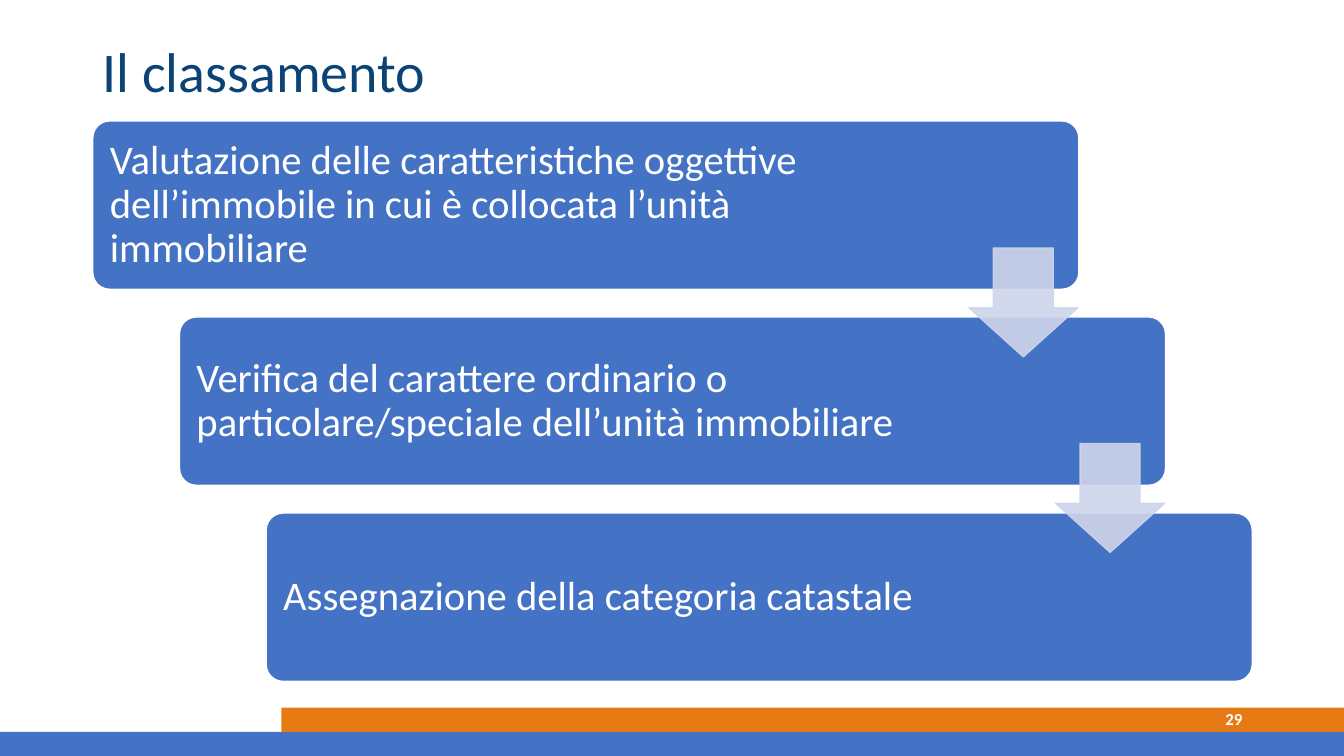
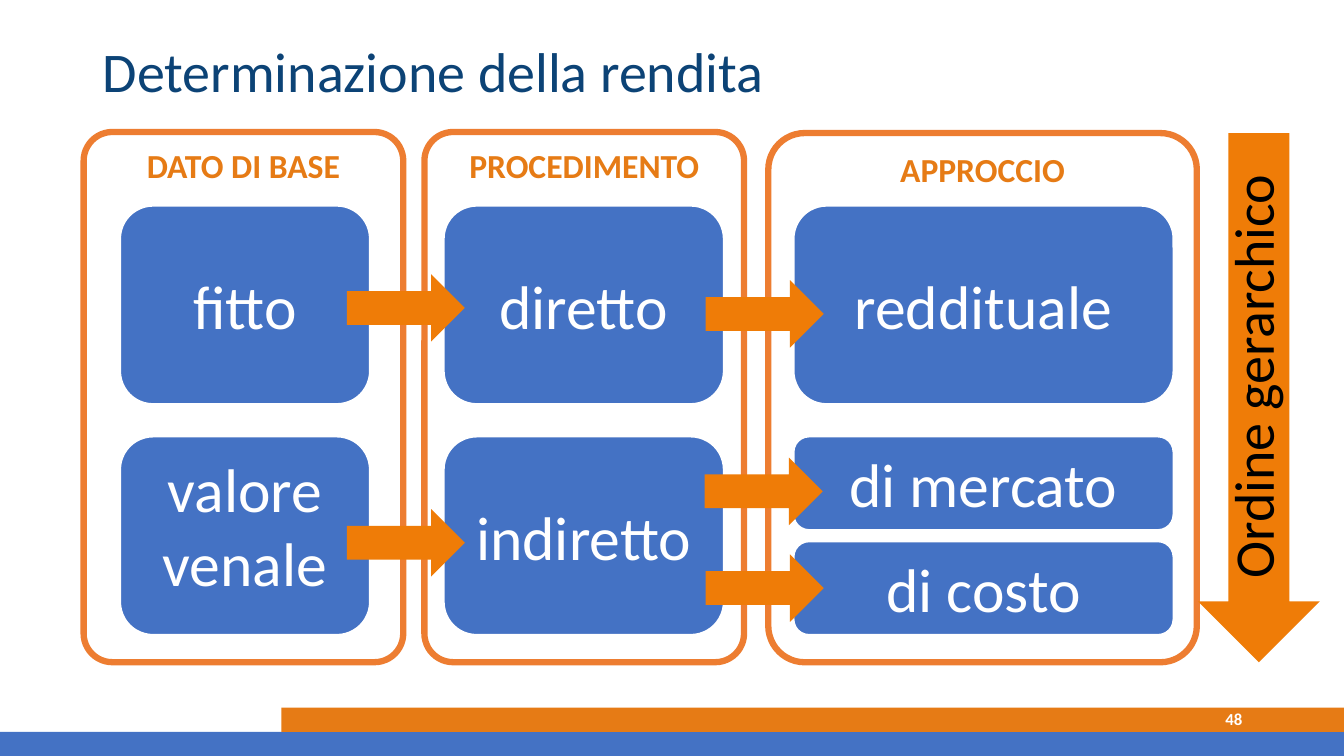
from lxml import etree
from pptx import Presentation
from pptx.dml.color import RGBColor
from pptx.enum import shapes, text
from pptx.oxml import ns
from pptx.util import Inches, Pt

BLUE, ORANGE, ARROW = "4472C4", "E67B15", "EF7C07"
FRAME, PALE, NAVY = "ED7D31", "CFD5EA", "0C4376"
WHITE, BLACK = "FFFFFF", "000000"
KIND = shapes.MSO_SHAPE
ROUND = KIND.ROUNDED_RECTANGLE
MID, TOP = text.MSO_ANCHOR.MIDDLE, text.MSO_ANCHOR.TOP
LEFT, MIDDLE, RIGHT = (text.PP_ALIGN.LEFT, text.PP_ALIGN.CENTER,
                       text.PP_ALIGN.RIGHT)


def draw(slide, kind, box, fill=None, line=None, width=1, adj=(), alpha=None):
    """Add a preset shape, or a text box when kind is None."""
    place = [Inches(v) for v in box]
    if kind is None:
        return slide.shapes.add_textbox(*place)
    shape = slide.shapes.add_shape(kind, *place)
    shape.shadow.inherit = False
    for i, value in enumerate(adj):
        shape.adjustments[i] = value
    if fill:
        shape.fill.solid()
        shape.fill.fore_color.rgb = RGBColor.from_string(fill)
    else:
        shape.fill.background()
    if line:
        shape.line.color.rgb = RGBColor.from_string(line)
        shape.line.width = Pt(width)
    else:
        shape.line.fill.background()
    if alpha:
        for color in shape._element.spPr.iter(ns.qn("a:srgbClr")):
            etree.SubElement(color, ns.qn("a:alpha"), val=str(alpha * 1000))
    return shape


def write(shape, words, size, color, align=MIDDLE, anchor=MID, bold=False,
          space=1.0, **margins):
    frame = shape.text_frame
    para = frame.paragraphs[0]
    para.text = words
    formats = {
        frame: {"word_wrap": True, "vertical_anchor": anchor,
                **{k: Inches(v) for k, v in margins.items()}},
        para: {"alignment": align, "line_spacing": space},
        para.font: {"name": "Calibri", "size": Pt(size), "bold": bold},
    }
    for target, values in formats.items():
        for name, value in values.items():
            setattr(target, name, value)
    para.font.color.rgb = RGBColor.from_string(color)


prs = Presentation()
prs.slide_width, prs.slide_height = Inches(13.33), Inches(7.5)

# Shared bands, page number and title
pages = []
for title, number in (("Il classamento", "29"),
                      ("Determinazione della rendita", "48")):
    page = prs.slides.add_slide(prs.slide_layouts[6])
    draw(page, KIND.RECTANGLE, (0, 7.26, 13.33, 0.24), BLUE)
    draw(page, KIND.RECTANGLE, (2.79, 7.02, 10.54, 0.24), ORANGE)
    write(draw(page, None, (9.42, 6.93, 3, 0.4)), number, 12, WHITE,
          align=RIGHT, bold=True)
    write(draw(page, None, (0.92, 0.4, 11.5, 0.67)), title, 40, NAVY,
          align=LEFT, space=0.9)
    pages.append(page)
steps, flow = pages

# Staircase of steps
labels = (
    "Valutazione delle caratteristiche oggettive dell’immobile "
    "in cui è collocata l’unità immobiliare",
    "Verifica del carattere ordinario o particolare/speciale "
    "dell’unità immobiliare",
    "Assegnazione della categoria catastale",
)
for i, label in enumerate(labels):
    step = draw(steps, ROUND, (0.92 + 0.86 * i, 1.2 + 1.945 * i, 9.78, 1.67),
                BLUE, WHITE, adj=[0.1])
    write(step, label, 29, WHITE, align=LEFT, space=0.9, margin_left=0.12,
          margin_top=0.12, margin_right=2.07, margin_bottom=0.12)
for i in range(len(labels) - 1):
    draw(steps, KIND.DOWN_ARROW, (9.61 + 0.86 * i, 2.46 + 1.94 * i, 1.08, 1.08),
         PALE, PALE, adj=[0.55, 0.45], alpha=90)

# Framed columns, each with its boxes: label, top, height, anchor
HIGH, LOW, TALL, SHORT = 2.04, 4.33, 1.97, 0.93
columns = (
    ("DATO DI BASE", (0.83, 1.31, 3.17, 5.26), 0.09, 1.19, 2.48,
     (("fitto", HIGH, TALL, MID), ("valore venale", LOW, TALL, TOP))),
    ("PROCEDIMENTO", (4.21, 1.31, 3.17, 5.26), 0.09, 4.4, 2.78,
     (("diretto", HIGH, TALL, MID), ("indiretto", LOW, TALL, MID))),
    ("APPROCCIO", (7.62, 1.32, 4.25, 5.25), 0.085, 7.87, 3.77,
     (("reddituale", HIGH, TALL, MID), ("di mercato", LOW, SHORT, MID),
      ("di costo", LOW + TALL - SHORT, SHORT, MID))),
)
for head, area, bend, left, wide, boxes in columns:
    frame = draw(flow, ROUND, area, line=FRAME, width=4.5, adj=[bend])
    write(frame, head, 24, ORANGE, anchor=TOP, bold=True)
    for label, top, high, anchor in boxes:
        box = draw(flow, ROUND, (left, top, wide, high), BLUE, WHITE, 1.5)
        write(box, label, 44, WHITE, anchor=anchor)

for left, top in ((3.44, 2.72), (3.44, 5.05), (7, 2.78), (6.99, 4.54), (7, 5.5)):
    draw(flow, KIND.RIGHT_ARROW, (left, top, 1.17, 0.67), ARROW)

# Ranking arrow
draw(flow, KIND.DOWN_ARROW, (11.88, 1.32, 1.21, 5.25), ARROW)
rank = draw(flow, None, (9.58, 3.35, 5.67, 0.77))
rank.rotation = 270
write(rank, "Ordine gerarchico", 40, BLACK, anchor=TOP)

prs.save("out.pptx")
